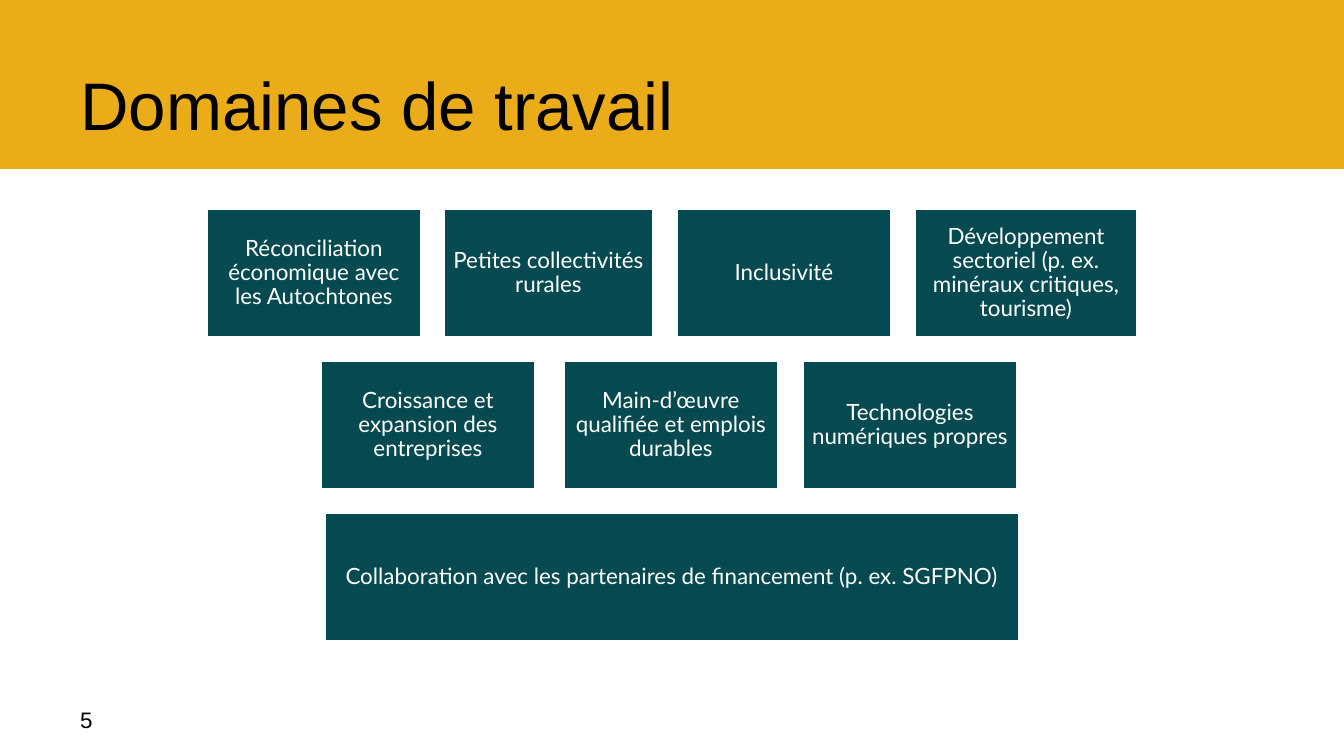
from dataclasses import dataclass

from pptx import Presentation
from pptx.dml.color import RGBColor as Rgb
from pptx.enum.shapes import MSO_SHAPE as Preset
from pptx.enum.text import MSO_ANCHOR as Anchor, PP_ALIGN as Align
from pptx.util import Emu, Pt

SLIDE_W, SLIDE_H = 1344, 756
BAND_H = 169
TILE_H, TILE_INSET = 130, 7
FIRST_ROW_TOP, ROW_STEP = 208, 152

# Each row holds (left, width, label).
AREA_ROWS = [
    [
        (206, 216, "Réconciliation économique avec les Autochtones"),
        (443, 211, "Petites collectivités rurales"),
        (676, 216, "Inclusivité"),
        (914, 224, "Développement sectoriel (p. ex. minéraux critiques, tourisme)"),
    ],
    [
        (320, 216, "Croissance et expansion des entreprises"),
        (563, 216, "Main-d’œuvre qualifiée et emplois durables"),
        (802, 216, "Technologies numériques propres"),
    ],
    [(324, 696, "Collaboration avec les partenaires de financement (p. ex. SGFPNO)")],
]


@dataclass(frozen=True)
class Theme:
    """Colours, fonts and type sizes of the slide."""

    band: Rgb = Rgb.from_string("EBAC1A")
    tile: Rgb = Rgb.from_string("054A51")
    light: Rgb = Rgb.from_string("FFFFFF")
    dark: Rgb = Rgb.from_string("000000")
    heading_font: str = "Arial"
    tile_font: str = "Lato"
    title_size: Pt = Pt(36)
    body_size: Pt = Pt(12)
    outline: Pt = Pt(2)


THEME = Theme()


def px(length):
    """Turn pixels into EMU."""
    return Emu(round(length * 914400 / 134.4))


def apply(target, formats):
    """Set every format value on the target."""
    for name, value in formats.items():
        setattr(target, name, value)


def write(frame, words, anchor, font, size, color, paragraph_format):
    """Put one formatted paragraph into a text frame."""
    apply(frame, {"word_wrap": True, "vertical_anchor": anchor})
    paragraph = frame.paragraphs[0]
    apply(paragraph, paragraph_format)
    run = paragraph.add_run()
    run.text = words
    apply(run.font, {"name": font, "size": size})
    run.font.color.rgb = color


def add_block(slide, box, color):
    """Add a filled rectangle without shadow or outline."""
    block = slide.shapes.add_shape(Preset.RECTANGLE, *map(px, box))
    block.shadow.inherit = False
    block.fill.solid()
    block.fill.fore_color.rgb = color
    block.line.fill.background()
    return block


def add_label(slide, box, words, size, anchor):
    """Add dark left-aligned text in the heading font."""
    label = slide.shapes.add_textbox(*map(px, box))
    write(label.text_frame, words, anchor, THEME.heading_font, size,
          THEME.dark, {"alignment": Align.LEFT})


def add_tile(slide, box, words):
    """Add an outlined work-area tile with centred text."""
    tile = add_block(slide, box, THEME.tile)
    tile.line.color.rgb = THEME.light
    tile.line.width = THEME.outline
    sides = ("left", "top", "right", "bottom")
    apply(tile.text_frame, {f"margin_{side}": px(TILE_INSET) for side in sides})
    write(tile.text_frame, words, Anchor.MIDDLE, THEME.tile_font,
          THEME.body_size, THEME.light,
          {"alignment": Align.CENTER, "line_spacing": 0.9, "space_after": Pt(4.2)})


def main():
    """Build the slide and save it."""
    deck = Presentation()
    apply(deck, {"slide_width": px(SLIDE_W), "slide_height": px(SLIDE_H)})
    slide = deck.slides.add_slide(deck.slide_layouts[6])
    add_block(slide, (0, 0, SLIDE_W, BAND_H), THEME.band)
    add_label(slide, (67, 42, 1210, 109), "Domaines de travail",
              THEME.title_size, Anchor.BOTTOM)
    add_label(slide, (67, 700, 144, 40), "5", THEME.body_size, Anchor.MIDDLE)
    for index, row in enumerate(AREA_ROWS):
        top = FIRST_ROW_TOP + index * ROW_STEP
        for left, width, words in row:
            add_tile(slide, (left, top, width, TILE_H), words)
    deck.save("out.pptx")


if __name__ == "__main__":
    main()
